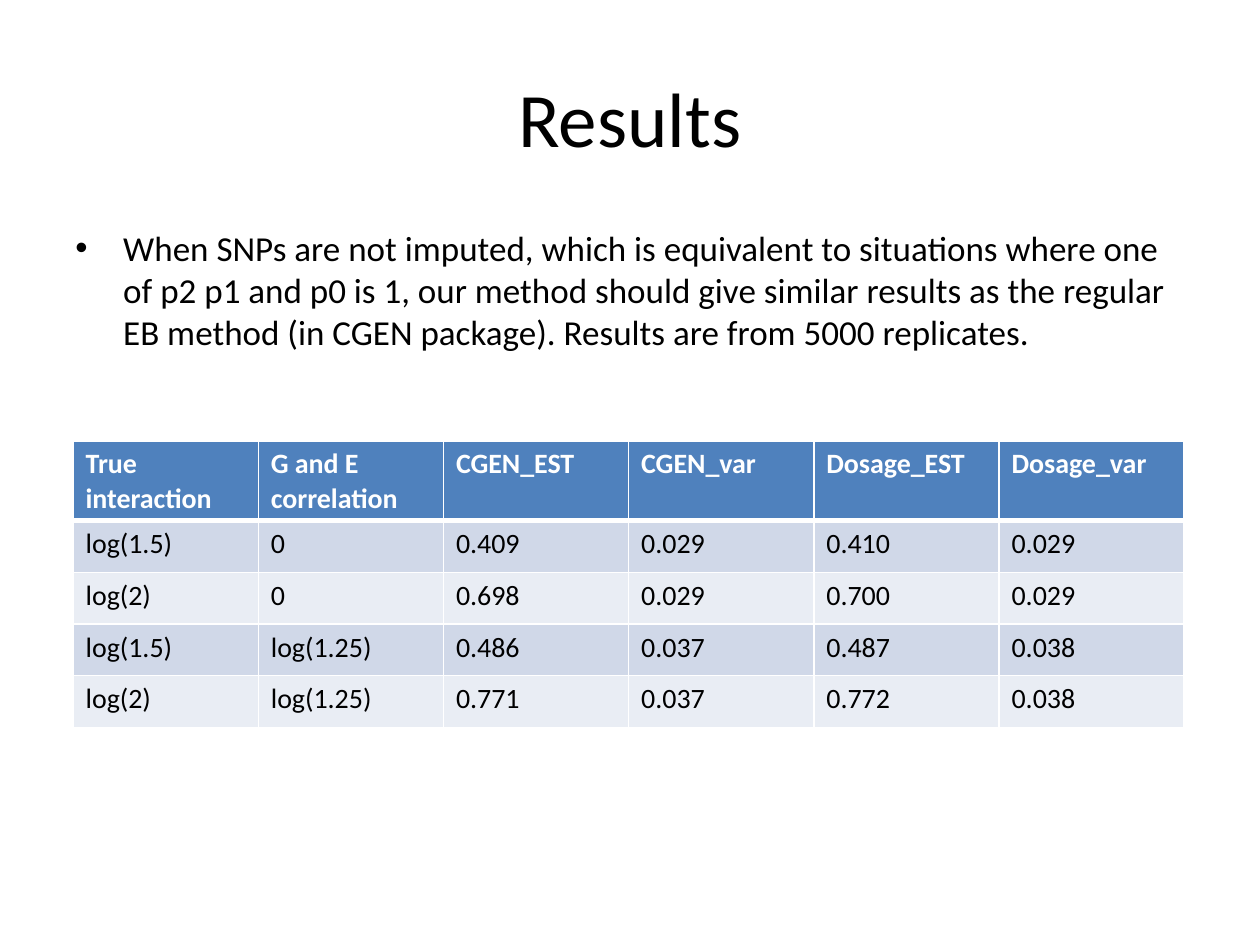
from lxml import etree
from pptx import Presentation
from pptx import util as u
from pptx.dml.color import RGBColor
from pptx.enum import text
from pptx.oxml.ns import qn

COLORS = {
    "ink": "000000",
    "white": "FFFFFF",
    "header": "4F81BD",
    "odd_row": "D0D8E8",
    "even_row": "E9EDF4",
}
FONT = "Calibri"

SUMMARY = (
    "When SNPs are not imputed, which is equivalent to situations where one of p2 p1 "
    "and p0 is 1, our method should give similar results as the regular EB method "
    "(in CGEN package). Results are from 5000 replicates."
)
RESULTS = [
    ["True interaction", "G and E correlation", "CGEN_EST", "CGEN_var", "Dosage_EST", "Dosage_var"],
    ["log(1.5)", "0", "0.409", "0.029", "0.410", "0.029"],
    ["log(2)", "0", "0.698", "0.029", "0.700", "0.029"],
    ["log(1.5)", "log(1.25)", "0.486", "0.037", "0.487", "0.038"],
    ["log(2)", "log(1.25)", "0.771", "0.037", "0.772", "0.038"],
]


def write_text(frame, content, size, color="ink", bold=False, align=text.PP_ALIGN.LEFT):
    paragraph = frame.paragraphs[0]
    paragraph.alignment = align
    run = paragraph.add_run()
    run.text = content
    run.font.name = FONT
    run.font.size = u.Pt(size)
    run.font.bold = bold
    run.font.color.rgb = RGBColor.from_string(COLORS[color])
    return paragraph


def add_bullet(paragraph, indent):
    properties = paragraph._p.get_or_add_pPr()
    properties.set("marL", str(u.Inches(indent)))
    properties.set("indent", str(-u.Inches(indent)))
    etree.SubElement(properties, qn("a:buFont"), typeface="Arial")
    etree.SubElement(properties, qn("a:buChar"), char="•")


def set_borders(cell, color, **widths):
    """Draw cell borders; widths maps L, R, T and B, in that order, to points."""
    properties = cell._tc.get_or_add_tcPr()
    for side, width in widths.items():
        line = etree.SubElement(properties, qn(f"a:ln{side}"), w=str(u.Pt(width)))
        fill = etree.SubElement(line, qn("a:solidFill"))
        etree.SubElement(fill, qn("a:srgbClr"), val=COLORS[color])


class SlideBuilder:
    def __init__(self, slide):
        self.slide = slide
        self.title_size = 44
        self.body_size = 20
        self.table_size = 16

    def add_text_frame(self, left, top, width, height, anchor):
        box = self.slide.shapes.add_textbox(*map(u.Inches, (left, top, width, height)))
        frame = box.text_frame
        frame.word_wrap = True
        frame.vertical_anchor = anchor
        return frame

    def add_title(self, content, *place):
        frame = self.add_text_frame(*place, anchor=text.MSO_ANCHOR.MIDDLE)
        write_text(frame, content, self.title_size, align=text.PP_ALIGN.CENTER)

    def add_bullet_text(self, content, *place):
        frame = self.add_text_frame(*place, anchor=text.MSO_ANCHOR.TOP)
        paragraph = write_text(frame, content, self.body_size)
        paragraph.space_before = u.Pt(0.2 * self.body_size)
        add_bullet(paragraph, 0.38)

    def add_table(self, rows, left, top, column_width, header_height, row_height):
        width = column_width * len(rows[0])
        height = header_height + row_height * (len(rows) - 1)
        place = map(u.Inches, (left, top, width, height))
        table = self.slide.shapes.add_table(len(rows), len(rows[0]), *place).table
        for column in table.columns:
            column.width = u.Inches(column_width)
        for index, values in enumerate(rows):
            is_header = index == 0
            table.rows[index].height = u.Inches(header_height if is_header else row_height)
            fill = "header" if is_header else "odd_row" if index % 2 else "even_row"
            for column_index, value in enumerate(values):
                cell = table.cell(index, column_index)
                set_borders(cell, "white", L=1, R=1,
                            T=3 if index == 1 else 1, B=3 if is_header else 1)
                cell.fill.solid()
                cell.fill.fore_color.rgb = RGBColor.from_string(COLORS[fill])
                write_text(cell.text_frame, value, self.table_size,
                           color="white" if is_header else "ink", bold=is_header)


def main():
    presentation = Presentation()
    presentation.slide_width = u.Inches(10)
    presentation.slide_height = u.Inches(7.5)
    builder = SlideBuilder(presentation.slides.add_slide(presentation.slide_layouts[6]))
    builder.add_title("Results", 0.5, 0.3, 9, 1.25)
    builder.add_bullet_text(SUMMARY, 0.5, 1.75, 9, 4.95)
    builder.add_table(RESULTS, 0.58, 3.5, column_width=1.47, header_height=0.63, row_height=0.41)
    presentation.save("out.pptx")


if __name__ == "__main__":
    main()
